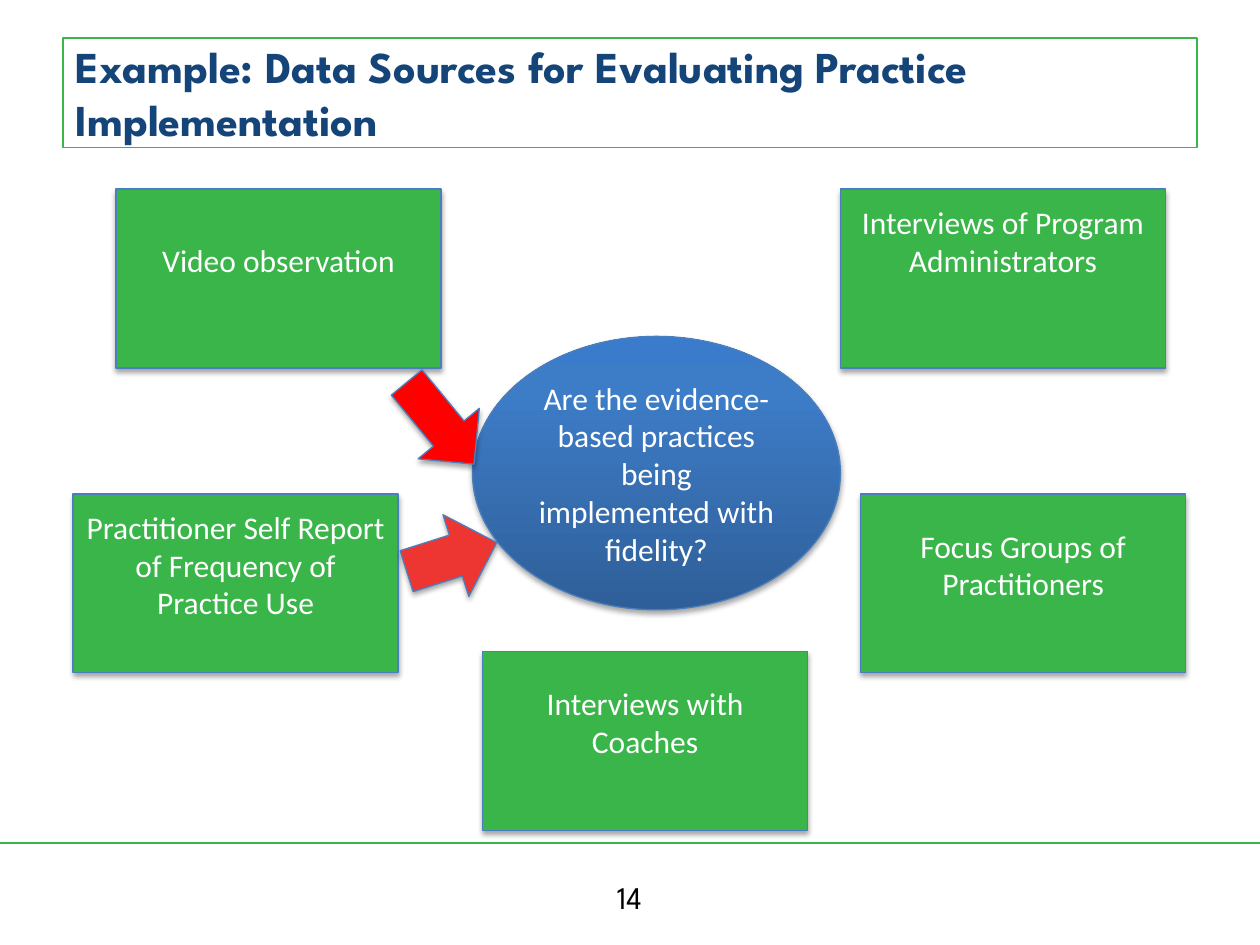
from lxml.etree import SubElement
from pptx import Presentation
from pptx.dml.color import RGBColor
from pptx.enum.shapes import MSO_CONNECTOR, MSO_SHAPE
from pptx.enum.text import MSO_ANCHOR, MSO_AUTO_SIZE, PP_ALIGN
from pptx.oxml import parse_xml
from pptx.oxml.ns import nsdecls, qn
from pptx.util import Inches, Pt

COLORS = {
    "green": "39B54A",
    "navy": "154578",
    "outline": "4B7EBC",
    "crimson": "ED3532",
    "red": "FF0000",
    "white": "FFFFFF",
    "black": "000000",
}
GRADIENT = [(0, "2F5F99"), (80, "3D7CC7"), (100, "3A7CCB")]
BODY_FONT = "Calibri"
HEADING_FONT = "League Spartan"
SOURCE_WIDTH, SOURCE_HEIGHT = 2.58, 1.42
LINE_HEIGHT = 0.3
SOURCES = [
    ("Video observation", 0.92, 1.5, 1),
    ("Practitioner Self Report of Frequency of Practice Use", 0.58, 3.92, 1),
    ("Interviews of Program Administrators", 6.67, 1.5, 2),
    ("Focus Groups of Practitioners", 6.83, 3.92, 1),
    ("Interviews with Coaches", 3.83, 5.17, 1),
]
ARROWS = [
    (MSO_SHAPE.RIGHT_ARROW, (3.21, 4.08, 0.75, 0.68), 342.4, "crimson"),
    (MSO_SHAPE.DOWN_ARROW, (3.18, 2.94, 0.63, 0.84), 320.5, "red"),
]


def color(name):
    """Return the named colour."""
    return RGBColor.from_string(COLORS[name])


def write(frame, text, font, size, color_name, align, bold=False):
    """Write one formatted paragraph into a text frame."""
    frame.word_wrap = True
    para = frame.paragraphs[0]
    para.alignment = align
    span = para.add_run()
    span.text = text
    span.font.name = font
    span.font.size = Pt(size)
    span.font.bold = bold
    span.font.color.rgb = color(color_name)


def add_shadow(shape):
    """Give a shape a soft shadow straight below it."""
    shape.shadow.inherit = False
    effects = shape._element.spPr.find(qn("a:effectLst"))
    shadow = SubElement(
        effects, qn("a:outerShdw"), blurRad=str(Pt(3.1)), dist=str(Pt(1.8)),
        dir="5400000", rotWithShape="0",
    )
    tint = SubElement(shadow, qn("a:srgbClr"), val=COLORS["black"])
    SubElement(tint, qn("a:alpha"), val="35000")


def add_figure(page, kind, place, fill=None):
    """Add an outlined, shadowed shape with an optional solid fill."""
    shape = page.shapes.add_shape(kind, *map(Inches, place))
    if fill:
        shape.fill.solid()
        shape.fill.fore_color.rgb = color(fill)
    shape.line.color.rgb = color("outline")
    shape.line.width = Pt(0.75)
    add_shadow(shape)
    return shape


def add_title(page, text):
    """Place and format the outlined title."""
    title = page.shapes.title
    title.left, title.top = Inches(0.5), Inches(0.3)
    title.width, title.height = Inches(9), Inches(0.87)
    title.line.color.rgb = color("green")
    title.line.width = Pt(1)
    frame = title.text_frame
    frame.auto_size = MSO_AUTO_SIZE.NONE
    frame.vertical_anchor = MSO_ANCHOR.MIDDLE
    write(frame, text, HEADING_FONT, 25.2, "navy", PP_ALIGN.LEFT, bold=True)


def add_footer(page, number):
    """Add the footer rule and the page number."""
    rule = page.shapes.add_connector(
        MSO_CONNECTOR.STRAIGHT, Inches(0), Inches(6.69), Inches(10), Inches(6.69)
    )
    rule.line.color.rgb = color("green")
    rule.line.width = Pt(1.5)
    SubElement(rule._element.spPr, qn("a:effectLst"))
    box = page.shapes.add_textbox(*map(Inches, (3.83, 6.92, 2.33, 0.4)))
    write(box.text_frame, number, HEADING_FONT, 18, "black", PP_ALIGN.CENTER)


def add_question(page, text):
    """Add the central ellipse with its vertical gradient."""
    ellipse = add_figure(page, MSO_SHAPE.OVAL, (3.75, 2.67, 2.92, 2.17))
    stops = "".join(
        f'<a:gs pos="{position * 1000}"><a:srgbClr val="{value}"/></a:gs>'
        for position, value in GRADIENT
    )
    gradient = parse_xml(
        f'<a:gradFill {nsdecls("a")} rotWithShape="1"><a:gsLst>{stops}</a:gsLst>'
        '<a:lin ang="16200000" scaled="0"/></a:gradFill>'
    )
    ellipse._element.spPr.find(qn("a:prstGeom")).addnext(gradient)
    ellipse.text_frame.vertical_anchor = MSO_ANCHOR.MIDDLE
    write(ellipse.text_frame, text, BODY_FONT, 18, "white", PP_ALIGN.CENTER)


def add_source(page, text, left, top, raised_lines):
    """Add a data source box whose text sits above the middle."""
    place = (left, top, SOURCE_WIDTH, SOURCE_HEIGHT)
    frame = add_figure(page, MSO_SHAPE.RECTANGLE, place, "green").text_frame
    frame.vertical_anchor = MSO_ANCHOR.MIDDLE
    frame.margin_bottom = Inches(0.05 + raised_lines * LINE_HEIGHT)
    write(frame, text, BODY_FONT, 18, "white", PP_ALIGN.CENTER)


def add_arrow(page, kind, place, rotation, fill):
    """Add a turned block arrow."""
    add_figure(page, kind, place, fill).rotation = rotation


def main():
    """Build and save the slide."""
    deck = Presentation()
    deck.slide_width, deck.slide_height = Inches(10), Inches(7.5)
    page = deck.slides.add_slide(deck.slide_layouts[5])
    add_title(page, "Example: Data Sources for Evaluating Practice Implementation")
    add_footer(page, "14")
    add_question(
        page, "Are the evidence-based practices being implemented with fidelity?"
    )
    for source in SOURCES:
        add_source(page, *source)
    for arrow in ARROWS:
        add_arrow(page, *arrow)
    deck.save("out.pptx")


if __name__ == "__main__":
    main()
